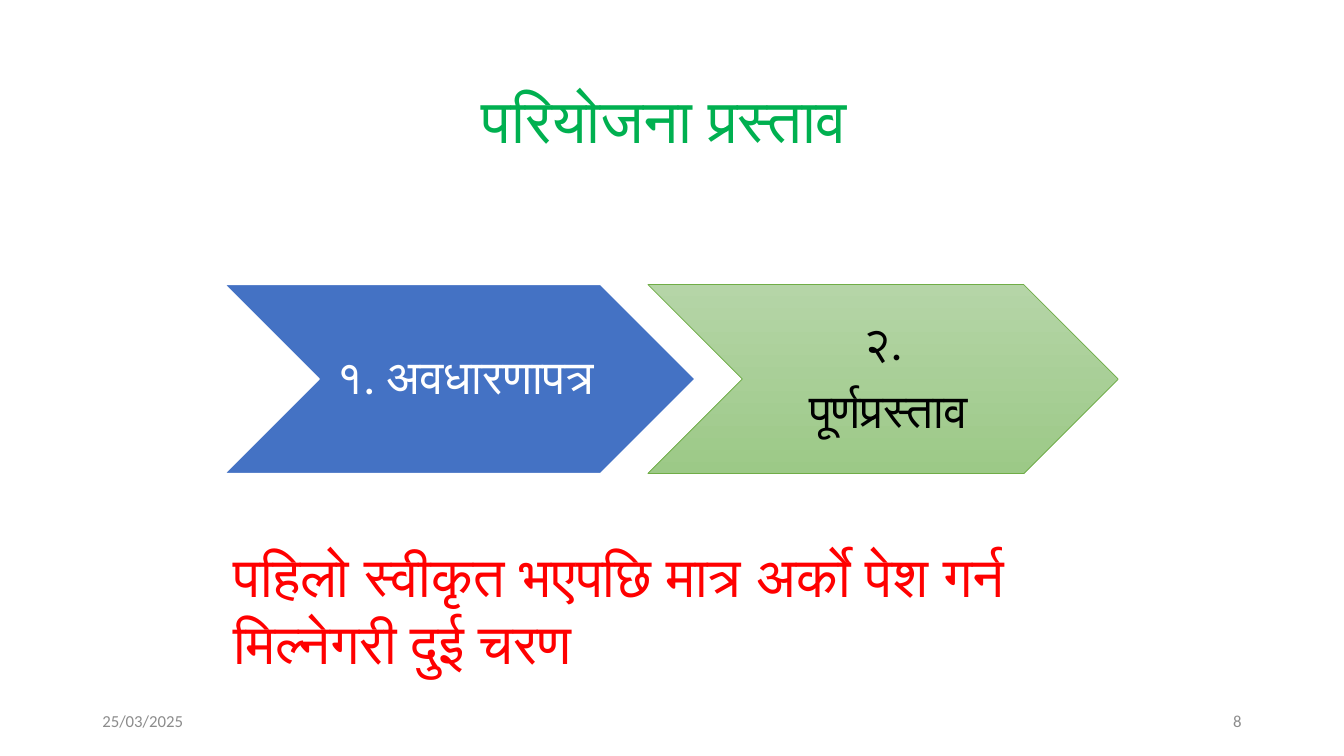
from pptx import Presentation
from pptx.dml.color import RGBColor
from pptx.enum.shapes import MSO_SHAPE
from pptx.enum.text import MSO_ANCHOR, PP_ALIGN
from pptx.util import Pt

PX = 9525  # 96 px to the inch


def color(code):
    return RGBColor.from_string(code)


def write(box, lines, form):
    """Put lines of text into a new text box, styled by form."""
    frame = slide.shapes.add_textbox(*[n * PX for n in box]).text_frame
    frame.word_wrap = True
    for name, value in form.get("frame", {}).items():
        setattr(frame, name, value)
    for i, line in enumerate(lines):
        para = frame.paragraphs[0] if i == 0 else frame.add_paragraph()
        for name, value in form.get("para", {}).items():
            setattr(para, name, value)
        run = para.add_run()
        run.text = line
        run.font.name = form.get("face", "Calibri")
        run.font.size = Pt(form["size"])
        run.font.color.rgb = color(form["ink"])


deck = Presentation()
deck.slide_width, deck.slide_height = 1280 * PX, 720 * PX
slide = deck.slides.add_slide(deck.slide_layouts[6])
middle = {"vertical_anchor": MSO_ANCHOR.MIDDLE}

# Title
write((88, 48, 1104, 139), ["परियोजना प्रस्ताव "], {
    "face": "Lato", "size": 44, "ink": "00B050", "frame": middle,
    "para": {"alignment": PP_ALIGN.CENTER, "line_spacing": 0.9}})

# Date and page number
for left, text, align in [(88, "25/03/2025", PP_ALIGN.LEFT),
                          (904, "8", PP_ALIGN.RIGHT)]:
    write((left, 667, 288, 38), [text], {
        "size": 12, "ink": "8C8C8C", "frame": middle,
        "para": {"alignment": align}})

# Note on the two steps
write((213, 511, 753, 139),
      ["पहिलो स्वीकृत भएपछि मात्र अर्को पेश गर्न मिल्नेगरी दुई चरण "],
      {"size": 40, "ink": "FF0000", "para": {"alignment": PP_ALIGN.JUSTIFY}})

# Chevrons: fill stops, line, line width, ink, label
steps = [
    (["4472C4"], "FFFFFF", 1, "FFFFFF", ["१. अवधारणापत्र"]),
    (["B5D5A7", "9CC987"], "70AD47", 0.5, "000000", ["२. ", "पूर्णप्रस्ताव"]),
]
inset = {"margin_left": 14 * PX, "margin_right": 5 * PX,
         "margin_top": 5 * PX, "margin_bottom": 5 * PX}
for i, (stops, edge, width, ink, label) in enumerate(steps):
    left = 214 + 403 * i
    arrow = slide.shapes.add_shape(
        MSO_SHAPE.CHEVRON, left * PX, 271 * PX, 448 * PX, 180 * PX)
    arrow.shadow.inherit = False
    if len(stops) == 1:
        arrow.fill.solid()
        arrow.fill.fore_color.rgb = color(stops[0])
    else:
        arrow.fill.gradient()
        arrow.fill.gradient_angle = 270
        for stop, code in zip(arrow.fill.gradient_stops, stops):
            stop.color.rgb = color(code)
    arrow.line.color.rgb = color(edge)
    arrow.line.width = Pt(width)
    write((left + 90, 271, 269, 180), label, {
        "size": 34, "ink": ink, "frame": {**middle, **inset},
        "para": {"alignment": PP_ALIGN.CENTER, "line_spacing": 0.9,
                 "space_after": Pt(12)}})

deck.save("out.pptx")
